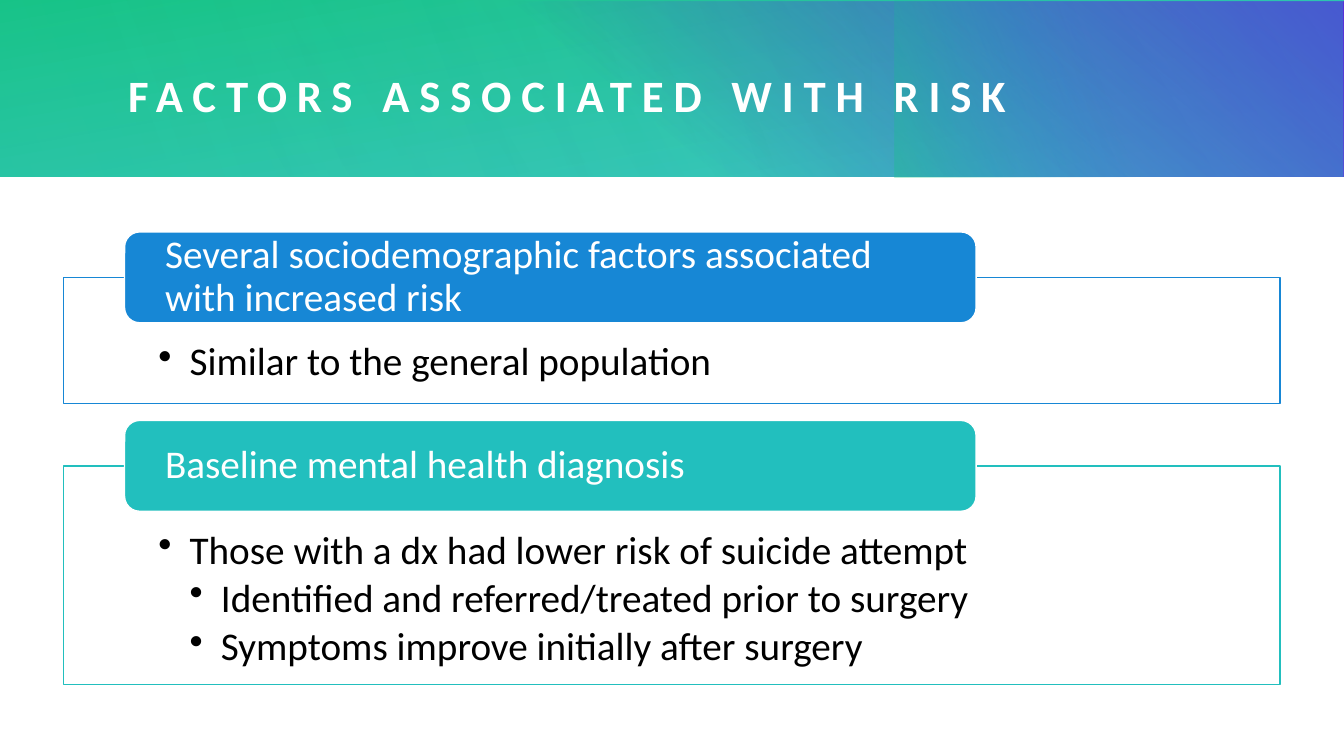
from dataclasses import dataclass

from lxml.etree import SubElement
from pptx import Presentation
from pptx.dml.color import RGBColor
from pptx.enum.shapes import MSO_SHAPE
from pptx.enum.text import MSO_ANCHOR, PP_ALIGN
from pptx.oxml.ns import qn
from pptx.util import Cm, Pt


@dataclass(frozen=True)
class Theme:
    font: str = "Calibri"
    title_size: int = 32
    text_size: int = 28
    white: str = "FFFFFF"
    black: str = "000000"
    blue: str = "1787D5"
    teal: str = "22BFBE"
    green: str = "16C67B"
    purple: str = "592FD9"


class SlideBuilder:
    def __init__(self, slide, theme):
        self.slide = slide
        self.theme = theme

    def shape(self, kind, bounds):
        shape = self.slide.shapes.add_shape(kind, *map(Cm, bounds))
        shape.shadow.inherit = False
        return shape

    def gradient(self, bounds, stops, angle, rotation=0):
        shape = self.shape(MSO_SHAPE.RECTANGLE, bounds)
        shape.rotation = rotation
        shape.line.fill.background()
        shape.fill.gradient()
        shape.fill.gradient_angle = 360 - angle
        for stop, (position, color, _) in zip(shape.fill.gradient_stops, stops):
            stop.position = position / 100
            stop.color.rgb = RGBColor.from_string(color)
        colors = shape._element.spPr.iter(qn("a:srgbClr"))
        for element, (_, _, opacity) in zip(list(colors), stops):
            SubElement(element, qn("a:alpha")).set("val", str(opacity * 1000))

    def box(self, kind, bounds, fill, line):
        shape = self.shape(kind, bounds)
        shape.fill.solid()
        shape.fill.fore_color.rgb = RGBColor.from_string(fill)
        shape.line.color.rgb = RGBColor.from_string(line)
        shape.line.width = Pt(1)
        return shape

    def frame(self, shape, insets, anchor):
        frame = shape.text_frame
        frame.word_wrap = True
        frame.vertical_anchor = anchor
        frame.margin_left, frame.margin_top, frame.margin_right, frame.margin_bottom = map(Cm, insets)
        return frame

    def span(self, para, text, size, color):
        para.alignment = PP_ALIGN.LEFT
        span = para.add_run()
        span.text = text
        span.font.name = self.theme.font
        span.font.size = Pt(size)
        span.font.color.rgb = RGBColor.from_string(color)
        return span

    def title(self, bounds, text):
        box = self.slide.shapes.add_textbox(*map(Cm, bounds))
        para = self.frame(box, (0, 0, 0, 0), MSO_ANCHOR.MIDDLE).paragraphs[0]
        span = self.span(para, text, self.theme.title_size, self.theme.white)
        span.font.bold = True
        span._r.get_or_add_rPr().set("spc", "700")

    def panel(self, bounds, color, bullets):
        box = self.box(MSO_SHAPE.RECTANGLE, bounds, self.theme.white, color)
        frame = self.frame(box, (2.39, 1.63, 2.39, 0.56), MSO_ANCHOR.TOP)
        indent = Cm(0.79)
        for index, (level, text) in enumerate(bullets):
            para = frame.add_paragraph() if index else frame.paragraphs[0]
            para.level = level
            para.line_spacing = 0.9
            para.space_after = Pt(4.2)
            properties = para._p.get_or_add_pPr()
            properties.set("marL", str(level * indent))
            properties.set("indent", str(-indent))
            SubElement(properties, qn("a:buChar")).set("char", "•")
            self.span(para, text, self.theme.text_size, self.theme.black)

    def label(self, bounds, color, text):
        box = self.box(MSO_SHAPE.ROUNDED_RECTANGLE, bounds, color, self.theme.white)
        para = self.frame(box, (0.91, 0, 0.91, 0), MSO_ANCHOR.MIDDLE).paragraphs[0]
        para.line_spacing = 0.9
        self.span(para, text, self.theme.text_size, self.theme.white)


def main():
    deck = Presentation()
    deck.slide_width, deck.slide_height = Cm(33.87), Cm(19.05)
    theme = Theme()
    page = SlideBuilder(deck.slides.add_slide(deck.slide_layouts[6]), theme)

    band = 4.45
    teal, green, blue, purple = theme.teal, theme.green, theme.blue, theme.purple
    page.gradient((0, 0, 33.87, band), [(0, teal, 83), (100, green, 100)], 260)
    page.gradient((12.22, 0.03, 21.65, 4.42), [(22, purple, 0), (99, purple, 100)], 310)
    page.gradient((25.07, -2.51, band, 9.5), [(45, blue, 0), (99, green, 33)], 250, 270)
    page.gradient((6.81, 0, 27.03, band), [(0, teal, 30), (99, teal, 0)], 330, 180)
    page.gradient((0, 0, 21.97, band), [(0, teal, 21), (99, teal, 0)], 340)
    page.title((3.23, 1.04, 28.83, 2.69), "FACTORS ASSOCIATED WITH RISK")

    sections = [
        (blue, 3.18, "Several sociodemographic factors associated with increased risk",
         [(1, "Similar to the general population")]),
        (teal, 5.51, "Baseline mental health diagnosis",
         [(1, "Those with a dx had lower risk of suicide attempt"),
          (2, "Identified and referred/treated prior to surgery"),
          (2, "Symptoms improve initially after surgery")]),
    ]
    top, gap, label_height = 6.99, 1.57, 2.29
    for color, height, heading, bullets in sections:
        page.panel((1.6, top, 30.66, height), color, bullets)
        page.label((3.14, top - label_height / 2, 21.46, label_height), color, heading)
        top += height + gap

    deck.save("out.pptx")


if __name__ == "__main__":
    main()
